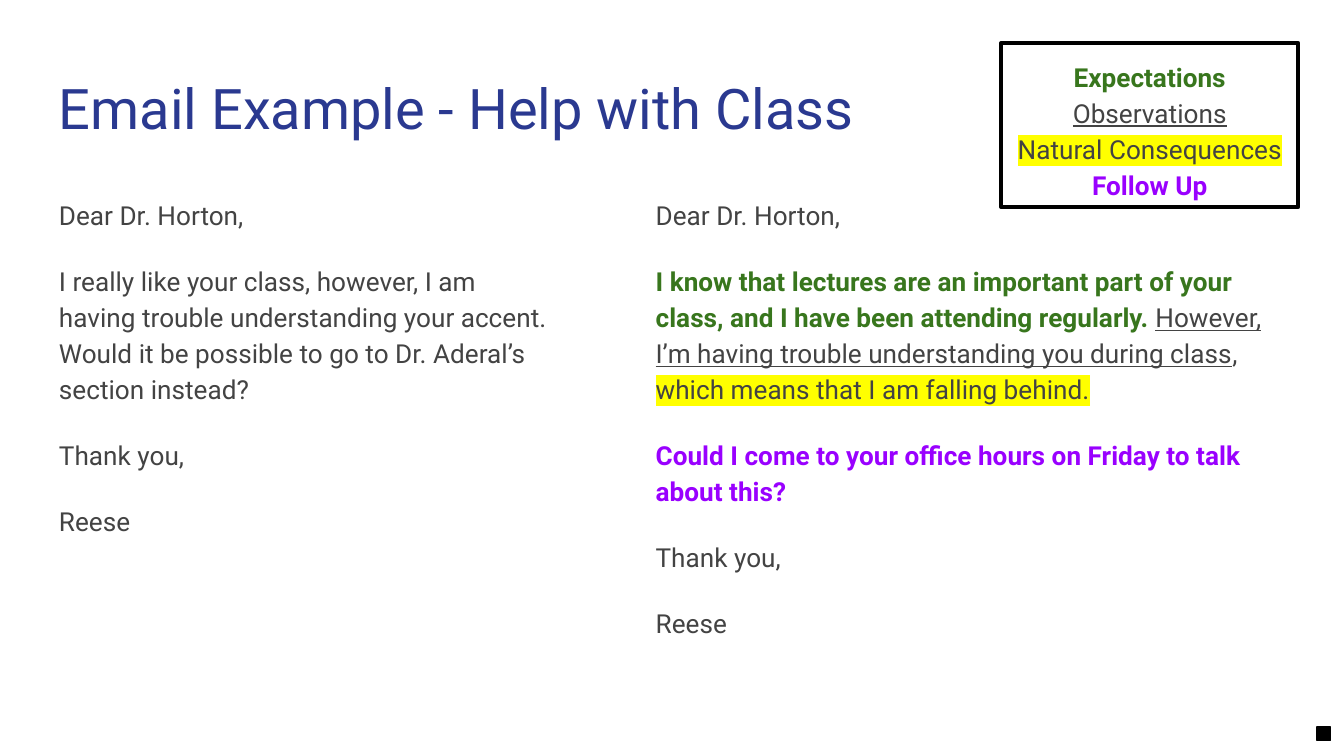
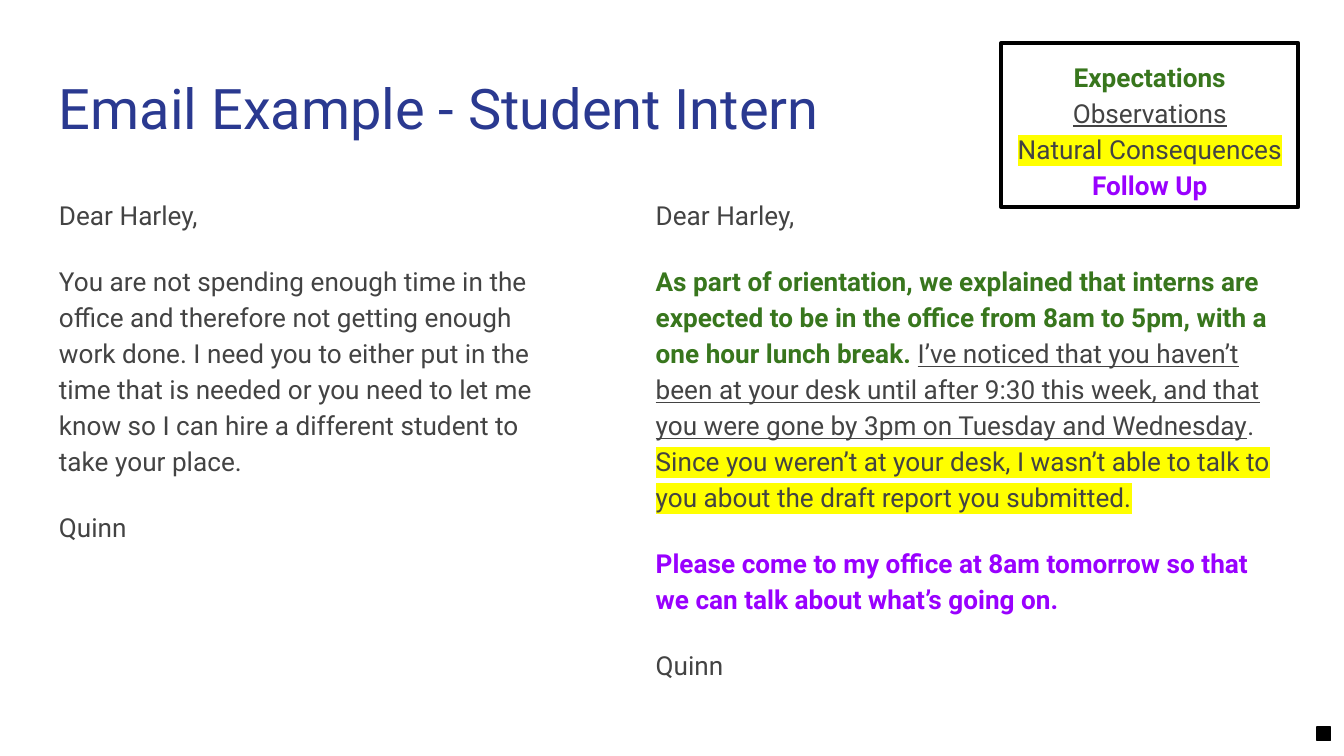
from lxml.etree import Element, SubElement
from pptx import Presentation
from pptx.dml.color import RGBColor
from pptx.enum.shapes import MSO_SHAPE
from pptx.enum.text import MSO_ANCHOR, PP_ALIGN
from pptx.oxml.ns import qn
from pptx.util import Inches, Pt

# Shared look
FONT = "Roboto"
WHITE = RGBColor(0xFF, 0xFF, 0xFF)
BLACK = RGBColor(0x00, 0x00, 0x00)
NAVY = RGBColor(0x2A, 0x39, 0x90)
GRAY = RGBColor(0x43, 0x43, 0x43)
GREEN = RGBColor(0x38, 0x76, 0x1D)
PURPLE = RGBColor(0x99, 0x00, 0xFF)
YELLOW = RGBColor(0xFF, 0xFF, 0x00)

# Role of a passage: colour, bold, underline, highlight
STYLES = {
    "title": (NAVY, False, False, None),
    "plain": (GRAY, False, False, None),
    "expectation": (GREEN, True, False, None),
    "observation": (GRAY, False, True, None),
    "consequence": (GRAY, False, False, YELLOW),
    "follow up": (PURPLE, True, False, None),
}

MARGIN, BODY_TOP, BODY_HEIGHT = 0.34, 1.35, 3.65

LEGEND = [
    [("expectation", "Expectations")],
    [("observation", "Observations")],
    [("consequence", "Natural Consequences")],
    [("follow up", "Follow Up")],
]

# Each email is a list of paragraphs, each paragraph a list of (role, text)
EXAMPLES = [
    (
        "Email Example - Help with Class",
        [
            [("plain", "Dear Dr. Horton,")],
            [("plain", "I really like your class, however, I am having trouble "
                       "understanding your accent. Would it be possible to go to "
                       "Dr. Aderal’s section instead?")],
            [("plain", "Thank you,")],
            [("plain", "Reese")],
        ],
        [
            [("plain", "Dear Dr. Horton,")],
            [
                ("expectation", "I know that lectures are an important part of your "
                                "class, and I have been attending regularly. "),
                ("observation", "However, I’m having trouble understanding you "
                                "during class"),
                ("plain", ", "),
                ("consequence", "which means that I am falling behind."),
            ],
            [("follow up", "Could I come to your office hours on Friday to talk "
                           "about this?")],
            [("plain", "Thank you,")],
            [("plain", "Reese")],
        ],
    ),
    (
        "Email Example - Student Intern",
        [
            [("plain", "Dear Harley,")],
            [("plain", "You are not spending enough time in the office and therefore "
                       "not getting enough work done. I need you to either put in the "
                       "time that is needed or you need to let me know so I can hire a "
                       "different student to take your place.")],
            [("plain", "Quinn")],
        ],
        [
            [("plain", "Dear Harley,")],
            [
                ("expectation", "As part of orientation, we explained that interns are "
                                "expected to be in the office from 8am to 5pm, with a "
                                "one hour lunch break. "),
                ("observation", "I’ve noticed that you haven’t been at your desk until "
                                "after 9:30 this week, and that you were gone by 3pm on "
                                "Tuesday and Wednesday"),
                ("plain", ". "),
                ("consequence", "Since you weren’t at your desk, I wasn’t able to talk "
                                "to you about the draft report you submitted."),
            ],
            [("follow up", "Please come to my office at 8am tomorrow so that we can "
                           "talk about what’s going on.")],
            [("plain", "Quinn")],
        ],
    ),
]


def style_run(run, role, size):
    color, bold, underline, highlight = STYLES[role]
    font = run.font
    font.name, font.size = FONT, Pt(size)
    font.bold, font.underline = bold, underline
    font.color.rgb = color
    if highlight is not None:
        mark = Element(qn("a:highlight"))
        SubElement(mark, qn("a:srgbClr")).set("val", str(highlight))
        run._r.rPr.find(qn("a:solidFill")).addnext(mark)


def write_text(frame, paragraphs, size=14, line_spacing=1.15, gap=0,
               align=PP_ALIGN.LEFT):
    frame.word_wrap = True
    frame.vertical_anchor = MSO_ANCHOR.TOP
    frame.margin_left = frame.margin_right = Inches(0.1)
    frame.margin_top = frame.margin_bottom = Inches(0.1)
    for index, passages in enumerate(paragraphs):
        paragraph = frame.add_paragraph() if index else frame.paragraphs[0]
        paragraph.alignment = align
        paragraph.line_spacing = line_spacing
        paragraph.space_before = Pt(gap if index else 0)
        for role, text in passages:
            run = paragraph.add_run()
            run.text = text
            style_run(run, role, size)


# Widescreen page, 16:9
prs = Presentation()
prs.slide_width = Inches(10)
prs.slide_height = prs.slide_width * 9 // 16

for heading, first_email, improved_email in EXAMPLES:
    slide = prs.slides.add_slide(prs.slide_layouts[6])
    slide.background.fill.solid()
    slide.background.fill.fore_color.rgb = WHITE

    # Title
    title = slide.shapes.add_textbox(
        Inches(MARGIN), Inches(0.45), Inches(9.32), Inches(0.66))
    write_text(title.text_frame, [[("title", heading)]], size=30, line_spacing=1)

    # The two emails side by side
    for left, width, email in ((4.78, 4.88, improved_email),
                               (MARGIN, 3.88, first_email)):
        column = slide.shapes.add_textbox(
            Inches(left), Inches(BODY_TOP), Inches(width), Inches(BODY_HEIGHT))
        write_text(column.text_frame, email, gap=16)

    # Legend of the four parts
    legend = slide.shapes.add_shape(
        MSO_SHAPE.RECTANGLE, Inches(7.45), Inches(0.32), Inches(2.21), Inches(1.22))
    legend.shadow.inherit = False
    legend.fill.background()
    legend.line.color.rgb = BLACK
    legend.line.width = Pt(2.25)
    write_text(legend.text_frame, LEGEND, align=PP_ALIGN.CENTER)

    # Corner marker
    corner = slide.shapes.add_shape(
        MSO_SHAPE.RECTANGLE, Inches(9.8), Inches(5.41), Inches(0.1), Inches(0.1))
    corner.shadow.inherit = False
    corner.fill.solid()
    corner.fill.fore_color.rgb = BLACK
    corner.line.color.rgb = BLACK
    corner.line.width = Pt(0.75)

prs.save("out.pptx")
